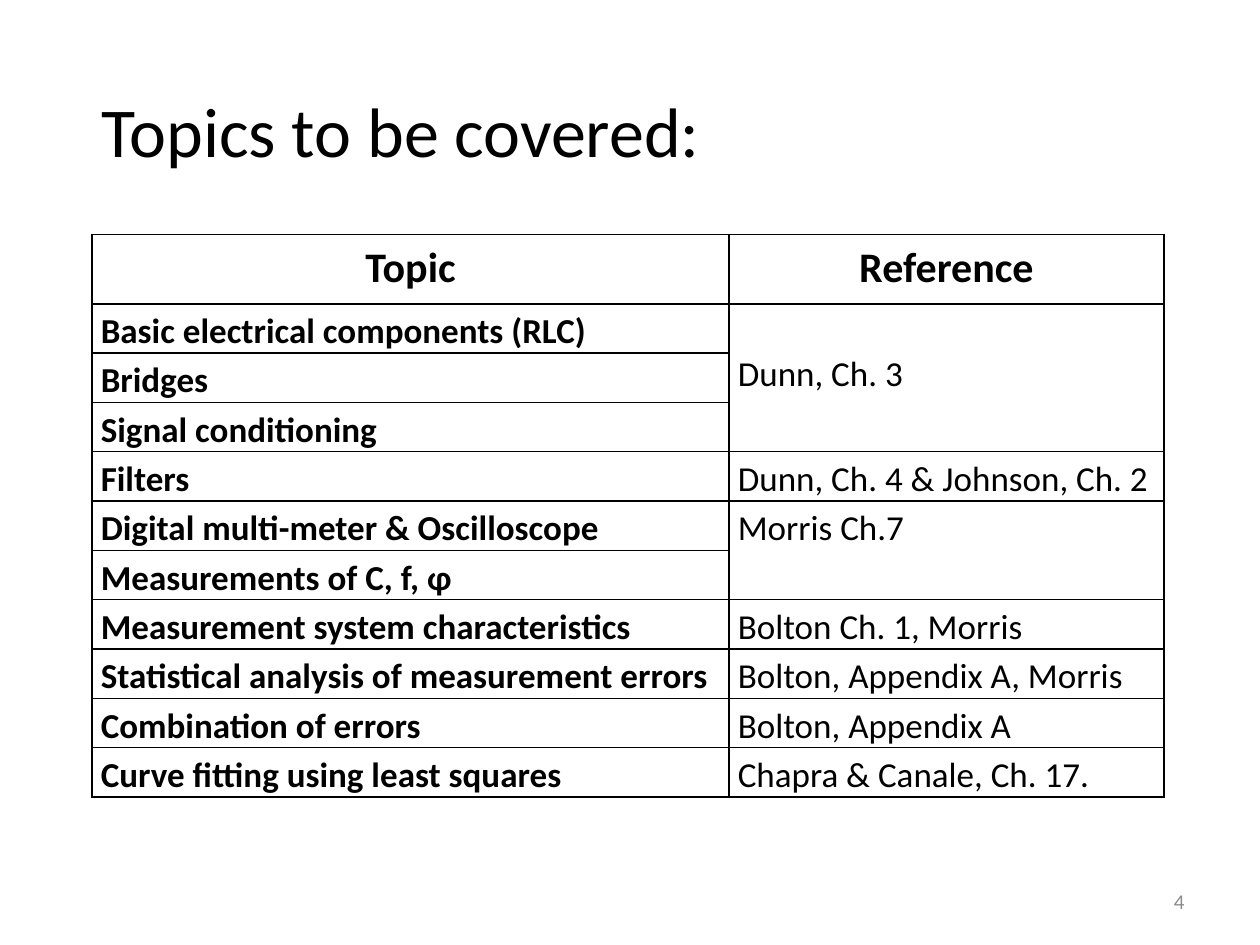
from lxml import etree
from pptx import Presentation
from pptx.dml.color import RGBColor
from pptx.enum.text import MSO_ANCHOR, PP_ALIGN
from pptx.oxml.ns import qn
from pptx.util import Pt

LEFT, CENTER, RIGHT = PP_ALIGN.LEFT, PP_ALIGN.CENTER, PP_ALIGN.RIGHT
MIDDLE = MSO_ANCHOR.MIDDLE
TITLE_ONLY = 5
COLORS = {"text": "000000", "cell": "FFFFFF", "border": "000000", "number": "8C8C8C"}

HEADERS = ("Topic", "Reference")
# Each reference covers one or more topics
GROUPS = [
    ("Dunn, Ch. 3",
     ["Basic electrical components (RLC)", "Bridges", "Signal conditioning"]),
    ("Dunn, Ch. 4 & Johnson, Ch. 2", ["Filters"]),
    ("Morris Ch.7", ["Digital multi-meter & Oscilloscope", "Measurements of C, f, φ"]),
    ("Bolton Ch. 1, Morris", ["Measurement system characteristics"]),
    ("Bolton, Appendix A, Morris", ["Statistical analysis of measurement errors"]),
    ("Bolton, Appendix A", ["Combination of errors"]),
    ("Chapra & Canale, Ch. 17.", ["Curve fitting using least squares"]),
]
COL_WIDTHS = (364, 248.4)
HEADER_HEIGHT, ROW_HEIGHT = 39.6, 28.2


class Deck:
    """Holds the style and the current slide."""

    font = "Calibri"

    def __init__(self, slide):
        self.slide = slide

    def set_text(self, tf, text, size, color="text", bold=False, align=LEFT):
        tf.text = text
        p = tf.paragraphs[0]
        p.alignment = align
        f = p.runs[0].font
        f.name, f.size, f.bold = self.font, Pt(size), bold
        f.color.rgb = RGBColor.from_string(COLORS[color])
        return p

    def title(self, text, x, y, w, h):
        sp = self.slide.shapes.title
        sp.left, sp.top, sp.width, sp.height = Pt(x), Pt(y), Pt(w), Pt(h)
        sp.text_frame.vertical_anchor = MIDDLE
        self.set_text(sp.text_frame, text, 40)

    def text(self, text, x, y, w, h, size, color, align):
        tf = self.slide.shapes.add_textbox(Pt(x), Pt(y), Pt(w), Pt(h)).text_frame
        tf.word_wrap = True
        tf.vertical_anchor = MIDDLE
        self.set_text(tf, text, size, color, align=align)

    def table(self, x, y, widths, heights):
        table = self.slide.shapes.add_table(
            len(heights), len(widths), Pt(x), Pt(y),
            Pt(sum(widths)), Pt(sum(heights))).table
        table.first_row = table.horz_banding = False
        for col, width in zip(table.columns, widths):
            col.width = Pt(width)
        for row, height in zip(table.rows, heights):
            row.height = Pt(height)
        for cell in table.iter_cells():
            self.format_cell(cell)
        return table

    def format_cell(self, cell):
        cell.margin_left = cell.margin_right = Pt(5)
        cell.margin_top = cell.margin_bottom = 0
        tc_pr = cell._tc.get_or_add_tcPr()
        for side in ("a:lnL", "a:lnR", "a:lnT", "a:lnB"):
            ln = etree.SubElement(tc_pr, qn(side), w=str(Pt(1)))
            fill = etree.SubElement(ln, qn("a:solidFill"))
            etree.SubElement(fill, qn("a:srgbClr"), val=COLORS["border"])
        cell.fill.solid()
        cell.fill.fore_color.rgb = RGBColor.from_string(COLORS["cell"])

    def cell(self, cell, text, size=20, bold=False, align=LEFT):
        p = self.set_text(cell.text_frame, text, size, bold=bold, align=align)
        p.line_spacing = 1.15


def main():
    prs = Presentation()
    prs.slide_width, prs.slide_height = Pt(720), Pt(540)
    deck = Deck(prs.slides.add_slide(prs.slide_layouts[TITLE_ONLY]))

    # Title
    deck.title("Topics to be covered:", 51, 45.4, 499, 57)

    # Topics table
    row_count = sum(len(topics) for _, topics in GROUPS)
    table = deck.table(52.6, 134, COL_WIDTHS, [HEADER_HEIGHT] + [ROW_HEIGHT] * row_count)
    for col, header in enumerate(HEADERS):
        deck.cell(table.cell(0, col), header, 24, True, CENTER)
    row = 1
    for reference, topics in GROUPS:
        ref_cell = table.cell(row, 1)
        if len(topics) > 1:
            ref_cell.merge(table.cell(row + len(topics) - 1, 1))
        if len(topics) > 2:
            ref_cell.margin_top = Pt(24.5)
        deck.cell(ref_cell, reference)
        for topic in topics:
            deck.cell(table.cell(row, 0), topic, bold=True)
            row += 1

    # Slide number
    deck.text("4", 516, 500.5, 168, 28.8, 12, "number", RIGHT)

    prs.save("out.pptx")


if __name__ == "__main__":
    main()
